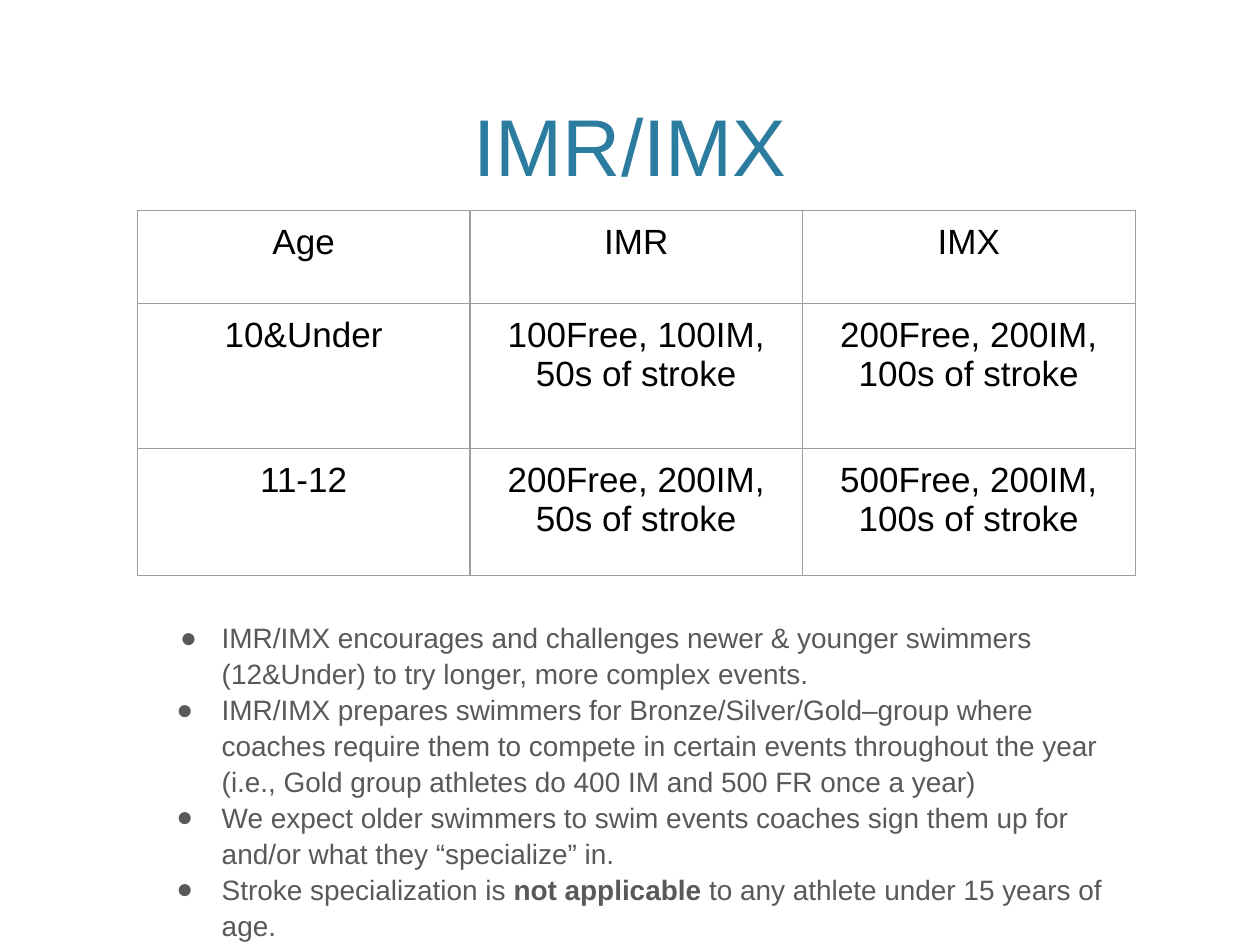
import pptx
from pptx.dml.color import RGBColor
from pptx.enum.text import MSO_ANCHOR, MSO_AUTO_SIZE, PP_ALIGN
from pptx.oxml import parse_xml
from pptx.oxml.ns import nsdecls
from pptx.util import Inches, Pt

TITLE = "IMR/IMX"
EVENTS = [
    ("Age", "IMR", "IMX"),
    ("10&Under", "100Free, 100IM, 50s of stroke", "200Free, 200IM, 100s of stroke"),
    ("11-12", "200Free, 200IM, 50s of stroke", "500Free, 200IM, 100s of stroke"),
]
# Each point is a list of spans; every second span is bold.
POINTS = [
    ["IMR/IMX encourages and challenges newer & younger swimmers (12&Under) "
     "to try longer, more complex events."],
    ["IMR/IMX prepares swimmers for Bronze/Silver/Gold–group where coaches require "
     "them to compete in certain events throughout the year (i.e., Gold group "
     "athletes do 400 IM and 500 FR once a year)"],
    ["We expect older swimmers to swim events coaches sign them up for and/or "
     "what they “specialize” in."],
    ["Stroke specialization is ", "not applicable", " to any athlete under 15 years of age."],
]
THEME = {
    "font": "Arial",
    "title": (46, "2C7C9F"),
    "table": (20, "000000"),
    "body": (16, "595959"),
    "border": "9E9E9E",
}
TITLE_BOX = (0.6, 0.12, 8.8, 1.46)
BODY_BOX = (1.16, 4.81, 7.79, 2.49)
TABLE_LEFT, TABLE_TOP = 1.09, 1.67
COLUMN_WIDTH = 2.64
ROW_HEIGHTS = (0.74, 1.15, 1.01)
MARGIN = Inches(0.1)
TEXT_INDENT = Inches(0.5)
FIRST_HANGING, HANGING = Inches(0.33), Inches(0.36)


def style(paragraph, role):
    size, color = THEME[role]
    paragraph.font.name = THEME["font"]
    paragraph.font.size = Pt(size)
    paragraph.font.bold = False
    paragraph.font.color.rgb = RGBColor.from_string(color)


def place(box, area, anchor):
    box.left, box.top, box.width, box.height = map(Inches, area)
    frame = box.text_frame
    frame.auto_size = MSO_AUTO_SIZE.NONE
    frame.word_wrap = True
    frame.vertical_anchor = anchor
    return frame


def set_bullet(paragraph, hanging):
    properties = paragraph._p.get_or_add_pPr()
    properties.set("marL", str(TEXT_INDENT))
    properties.set("indent", str(-hanging))
    color = THEME["body"][1]
    for xml in (
        f'<a:buClr {nsdecls("a")}><a:srgbClr val="{color}"/></a:buClr>',
        f'<a:buFont {nsdecls("a")} typeface="{THEME["font"]}"/>',
        f'<a:buChar {nsdecls("a")} char="●"/>',
    ):
        properties.append(parse_xml(xml))


def set_borders(cell):
    properties = cell._tc.get_or_add_tcPr()
    for position, side in enumerate("LRTB"):
        properties.insert(position, parse_xml(
            f'<a:ln{side} {nsdecls("a")} w="{Pt(0.75)}"><a:solidFill>'
            f'<a:srgbClr val="{THEME["border"]}"/></a:solidFill></a:ln{side}>'))


def add_title(slide):
    frame = place(slide.shapes.title, TITLE_BOX, MSO_ANCHOR.BOTTOM)
    frame.text = TITLE
    frame.paragraphs[0].alignment = PP_ALIGN.CENTER
    style(frame.paragraphs[0], "title")


def add_events(slide):
    columns = len(EVENTS[0])
    table = slide.shapes.add_table(
        len(EVENTS), columns, Inches(TABLE_LEFT), Inches(TABLE_TOP),
        Inches(COLUMN_WIDTH * columns), Inches(sum(ROW_HEIGHTS))).table
    table.first_row = table.horz_banding = False
    for column in table.columns:
        column.width = Inches(COLUMN_WIDTH)
    for row, height, texts in zip(table.rows, ROW_HEIGHTS, EVENTS):
        row.height = Inches(height)
        for cell, text in zip(row.cells, texts):
            cell.text = text
            cell.margin_left = cell.margin_right = MARGIN
            cell.margin_top = cell.margin_bottom = MARGIN
            cell.fill.background()
            set_borders(cell)
            paragraph = cell.text_frame.paragraphs[0]
            paragraph.alignment = PP_ALIGN.CENTER
            style(paragraph, "table")


def add_points(slide):
    frame = place(slide.placeholders[1], BODY_BOX, MSO_ANCHOR.TOP)
    frame.margin_left = frame.margin_right = MARGIN
    frame.margin_top = frame.margin_bottom = MARGIN
    for number, spans in enumerate(POINTS):
        paragraph = frame.add_paragraph() if number else frame.paragraphs[0]
        paragraph.line_spacing = 1.07
        paragraph.space_before = Pt(0)
        set_bullet(paragraph, HANGING if number else FIRST_HANGING)
        style(paragraph, "body")
        for index, text in enumerate(spans):
            span = paragraph.add_run()
            span.text = text
            if index % 2:
                span.font.bold = True


def main():
    deck = pptx.Presentation()
    deck.slide_width, deck.slide_height = Inches(10), Inches(7.5)
    slide = deck.slides.add_slide(deck.slide_layouts[1])
    add_title(slide)
    add_events(slide)
    add_points(slide)
    deck.save("out.pptx")


if __name__ == "__main__":
    main()
